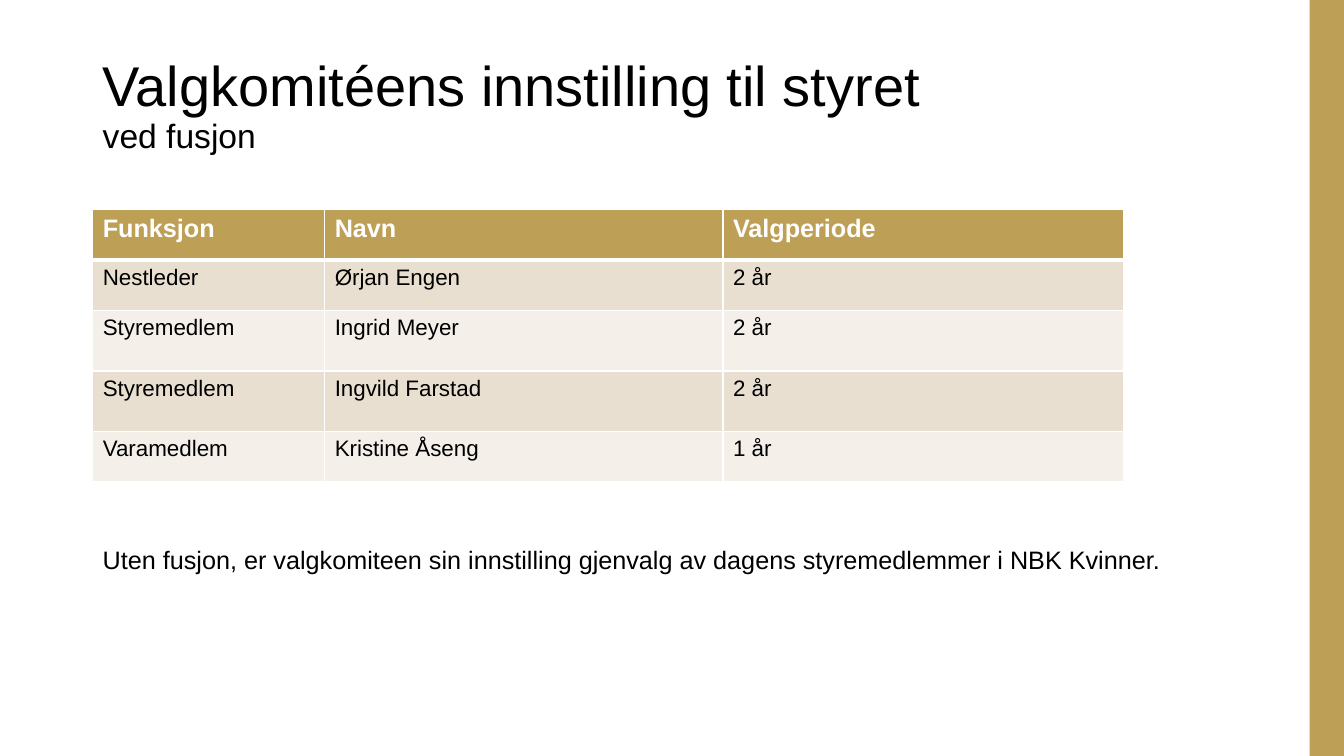
from lxml import etree
from pptx import Presentation
from pptx import util as u
from pptx.dml.color import RGBColor
from pptx.enum import shapes, text
from pptx.oxml import ns

GOLD = RGBColor(0xBE, 0x9F, 0x56)
SAND = RGBColor(0xE8, 0xDF, 0xD1)
CREAM = RGBColor(0xF4, 0xF0, 0xE9)
WHITE = RGBColor(0xFF, 0xFF, 0xFF)
BLACK = RGBColor(0, 0, 0)

BOARD = [
    ("Funksjon", "Navn", "Valgperiode"),
    ("Nestleder", "Ørjan Engen", "2 år"),
    ("Styremedlem", "Ingrid Meyer", "2 år"),
    ("Styremedlem", "Ingvild Farstad", "2 år"),
    ("Varamedlem", "Kristine Åseng", "1 år"),
]


class BoardSlide:
    """Draws the elements of one slide in a shared style."""

    font_name = "Arial"

    def __init__(self, slide):
        self.slide = slide

    def style(self, run, size, color=BLACK, bold=False):
        run.font.name = self.font_name
        run.font.size = u.Pt(size)
        run.font.color.rgb = color
        run.font.bold = bold

    def bar(self, left, top, width, height):
        side = self.slide.shapes.add_shape(
            shapes.MSO_SHAPE.RECTANGLE, *map(u.Inches, (left, top, width, height)))
        side.shadow.inherit = False
        side.fill.solid()
        side.fill.fore_color.rgb = GOLD
        side.line.fill.background()

    def text(self, wording, box, sizes, wrap=True, anchor=text.MSO_ANCHOR.TOP, spacing=None):
        frame = self.slide.shapes.add_textbox(*map(u.Inches, box)).text_frame
        frame.word_wrap = wrap
        frame.vertical_anchor = anchor
        frame.text = wording
        paragraph = frame.paragraphs[0]
        paragraph.line_spacing = spacing
        for run, size in zip(paragraph.runs, sizes):
            self.style(run, size)

    def borders(self, cell, widths):
        props = cell._tc.get_or_add_tcPr()
        for side, width in zip("LRTB", widths):
            line = etree.SubElement(props, ns.qn(f"a:ln{side}"), w=str(u.Pt(width)))
            fill = etree.SubElement(line, ns.qn("a:solidFill"))
            etree.SubElement(fill, ns.qn("a:srgbClr"), val=str(WHITE))

    def table(self, rows, left, top, widths, heights):
        grid = self.slide.shapes.add_table(
            len(rows), len(widths), u.Inches(left), u.Inches(top),
            u.Inches(sum(widths)), u.Inches(sum(heights))).table
        for column, width in zip(grid.columns, widths):
            column.width = u.Inches(width)
        for r, (row, height) in enumerate(zip(rows, heights)):
            grid.rows[r].height = u.Inches(height)
            header = r == 0
            shade = GOLD if header else SAND if r % 2 else CREAM
            for c, wording in enumerate(row):
                cell = grid.cell(r, c)
                self.borders(cell, (1, 1, 3 if r == 1 else 1, 3 if header else 1))
                cell.fill.solid()
                cell.fill.fore_color.rgb = shade
                cell.text = wording
                self.style(cell.text_frame.paragraphs[0].runs[0],
                           18 if header else 16, WHITE if header else BLACK, header)


def main():
    deck = Presentation()
    deck.slide_width = u.Inches(13.33)
    deck.slide_height = u.Inches(7.5)
    board = BoardSlide(deck.slides.add_slide(deck.slide_layouts[6]))
    board.bar(12.99, 0, 0.34, 7.5)
    board.text("Valgkomitéens innstilling til styret\vved fusjon", (0.92, 0.4, 10.51, 1.19),
               (40, 24), anchor=text.MSO_ANCHOR.BOTTOM, spacing=0.9)
    board.table(BOARD, 0.92, 2.08, (2.3, 3.95, 3.97), (0.5, 0.5, 0.6, 0.6, 0.5))
    board.text("Uten fusjon, er valgkomiteen sin innstilling gjenvalg av dagens "
               "styremedlemmer i NBK Kvinner.", (0.92, 5.35, 10.79, 0.4), (18,), wrap=False)
    deck.save("out.pptx")


if __name__ == "__main__":
    main()
